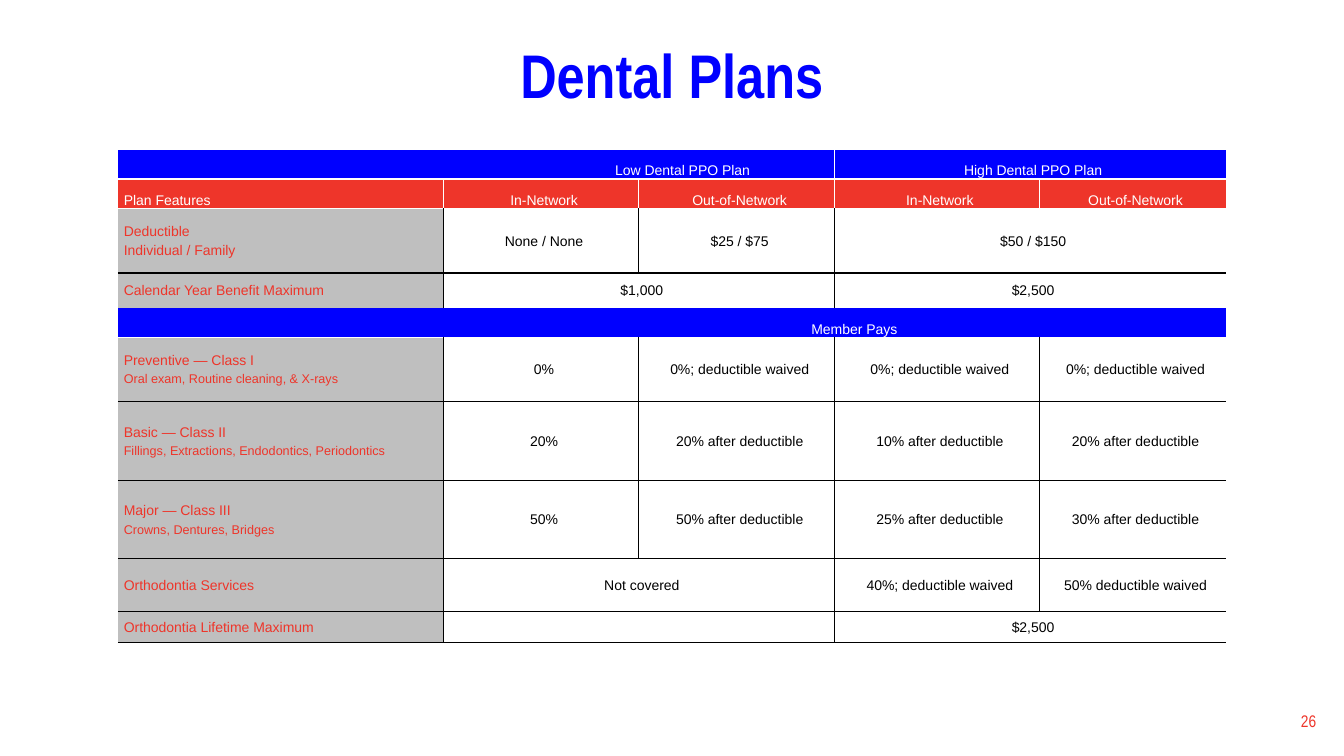
from dataclasses import dataclass

from lxml.etree import SubElement
from pptx import Presentation
from pptx.dml.color import RGBColor
from pptx.enum.text import MSO_ANCHOR as Anchor, MSO_AUTO_SIZE as AutoSize, PP_ALIGN as Align
from pptx.oxml.ns import qn
from pptx.util import Cm, Pt


@dataclass(frozen=True)
class Theme:
    blue: str = "0000FF"
    red: str = "EE352A"
    gray: str = "BFBFBF"
    white: str = "FFFFFF"
    black: str = "000000"
    title_font: str = "Arial Narrow"
    body_font: str = "Arial"
    title_size: float = 44
    number_size: float = 12
    cell_size: float = 10
    detail_size: float = 9
    border: float = 1


T = Theme()

# Table content: each cell is (text, columns spanned); a second line is the detail
COLUMNS = [8.2, 4.93, 4.93, 5.16, 4.7]
HEIGHTS = [0.75, 0.75, 1.62, 0.87, 0.75, 1.62, 1.98, 1.98, 1.33, 0.75]
ROWS = [
    [("Low Dental PPO Plan", 3), ("High Dental PPO Plan", 2)],
    [("Plan Features", 1)] + [("In-Network", 1), ("Out-of-Network", 1)] * 2,
    [("Deductible\nIndividual / Family", 1), ("None / None", 1), ("$25 / $75", 1),
     ("$50 / $150", 2)],
    [("Calendar Year Benefit Maximum", 1), ("$1,000", 2), ("$2,500", 2)],
    [("Member Pays", 5)],
    [("Preventive — Class I\nOral exam, Routine cleaning, & X-rays", 1), ("0%", 1)]
    + [("0%; deductible waived", 1)] * 3,
    [("Basic — Class II\nFillings, Extractions, Endodontics, Periodontics", 1), ("20%", 1),
     ("20% after deductible", 1), ("10% after deductible", 1), ("20% after deductible", 1)],
    [("Major — Class III\nCrowns, Dentures, Bridges", 1), ("50%", 1),
     ("50% after deductible", 1), ("25% after deductible", 1), ("30% after deductible", 1)],
    [("Orthodontia Services", 1), ("Not covered", 2), ("40%; deductible waived", 1),
     ("50% deductible waived", 1)],
    [("Orthodontia Lifetime Maximum", 1), ("", 2), ("$2,500", 2)],
]
BANDS = {0: T.blue, 1: T.red, 4: T.blue}
BAND_INDENTS = {(0, 0): 10.4, (4, 0): 9.2}
DEDUCTIBLE_ROW = 2


class SlideBuilder:
    def __init__(self, prs, theme):
        self.theme = theme
        self.slide = prs.slides.add_slide(prs.slide_layouts[5])

    def add_run(self, p, text, size, color, font, bold=False):
        r = p.add_run()
        r.text = text
        r.font.size = Pt(size)
        r.font.name = font
        r.font.bold = bold
        r.font.color.rgb = RGBColor.from_string(color)

    def title(self, text, left, top, width, height):
        s = self.slide.shapes.title
        s.left, s.top, s.width, s.height = Cm(left), Cm(top), Cm(width), Cm(height)
        tf = s.text_frame
        tf.auto_size = AutoSize.NONE
        tf.vertical_anchor = Anchor.TOP
        p = tf.paragraphs[0]
        p.alignment = Align.CENTER
        p.line_spacing = 0.9
        self.add_run(p, text, self.theme.title_size, self.theme.blue,
                     self.theme.title_font, True)

    def page_number(self, text, left, top, width, height):
        s = self.slide.shapes.add_textbox(Cm(left), Cm(top), Cm(width), Cm(height))
        tf = s.text_frame
        tf.word_wrap = True
        tf.vertical_anchor = Anchor.MIDDLE
        p = tf.paragraphs[0]
        p.alignment = Align.RIGHT
        self.add_run(p, text, self.theme.number_size, self.theme.red, self.theme.title_font)

    def borders(self, cell, colors):
        tc_pr = cell._tc.get_or_add_tcPr()
        for i, (side, color) in enumerate(zip("LRTB", colors)):
            ln = SubElement(tc_pr, qn(f"a:ln{side}"), w=str(Pt(self.theme.border)))
            if color:
                fill = SubElement(ln, qn("a:solidFill"))
                SubElement(fill, qn("a:srgbClr"), val=color)
            else:
                SubElement(ln, qn("a:noFill"))
            tc_pr.insert(i, ln)

    def cell_text(self, cell, text, color, align, indent, detail_size):
        for i, line in enumerate(text.split("\n") if text else []):
            tf = cell.text_frame
            p = tf.add_paragraph() if i else tf.paragraphs[0]
            p.alignment = align
            p.line_spacing = 1.07
            if i:
                p.space_before = Pt(1.9)
            p._p.get_or_add_pPr().set("marL", str(Cm(indent)))
            size = detail_size if i else self.theme.cell_size
            self.add_run(p, line, size, color, self.theme.body_font)

    def table(self, left, top):
        t = self.theme
        s = self.slide.shapes.add_table(len(ROWS), len(COLUMNS), Cm(left), Cm(top),
                                        Cm(sum(COLUMNS)), Cm(sum(HEIGHTS)))
        table = s.table
        table.first_row = table.horz_banding = False
        for column, width in zip(table.columns, COLUMNS):
            column.width = Cm(width)
        for row, height in zip(table.rows, HEIGHTS):
            row.height = Cm(height)
        for cell in table.iter_cells():
            cell.margin_left = cell.margin_right = cell.margin_top = cell.margin_bottom = 0

        for i, row in enumerate(ROWS):
            band = BANDS.get(i)
            detail_size = t.cell_size if i == DEDUCTIBLE_ROW else t.detail_size
            j = 0
            for text, span in row:
                cell, end = table.cell(i, j), j + span
                feature = j == 0 and not band
                # Fill and text
                fill = band or (t.gray if feature else None)
                if fill:
                    cell.fill.solid()
                    cell.fill.fore_color.rgb = RGBColor.from_string(fill)
                else:
                    cell.fill.background()
                cell.vertical_anchor = Anchor.BOTTOM if band else Anchor.MIDDLE
                color = t.white if band else t.red if feature else t.black
                left_aligned = j == 0 and span == 1
                self.cell_text(cell, text, color, Align.LEFT if left_aligned else Align.CENTER,
                               BAND_INDENTS.get((i, j), 0.15), detail_size)
                # Borders: white around bands, black inside the body
                line = t.white if band else t.black
                upper = t.white if band or i - 1 in BANDS else t.black
                lower = None if i + 1 in BANDS and not band else line
                colors = (line if j else None, line if end < len(COLUMNS) else None,
                          None if i and i in BANDS and i - 1 not in BANDS else upper, lower)
                for k in range(j, end):
                    inner = (colors[0] if k == j else None,
                             colors[1] if span == 1 or k in (j, end - 1) else None)
                    self.borders(table.cell(i, k), inner + colors[2:])
                if span > 1:
                    cell.merge(table.cell(i, end - 1))
                j = end


def main():
    prs = Presentation()
    prs.slide_width, prs.slide_height = Cm(33.87), Cm(19.05)
    builder = SlideBuilder(prs, T)
    builder.title("Dental Plans", 2.33, 1.01, 29.21, 3.68)
    builder.table(2.97, 3.76)
    builder.page_number("26", 25.8, 17.66, 7.62, 1.01)
    prs.save("out.pptx")


if __name__ == "__main__":
    main()
